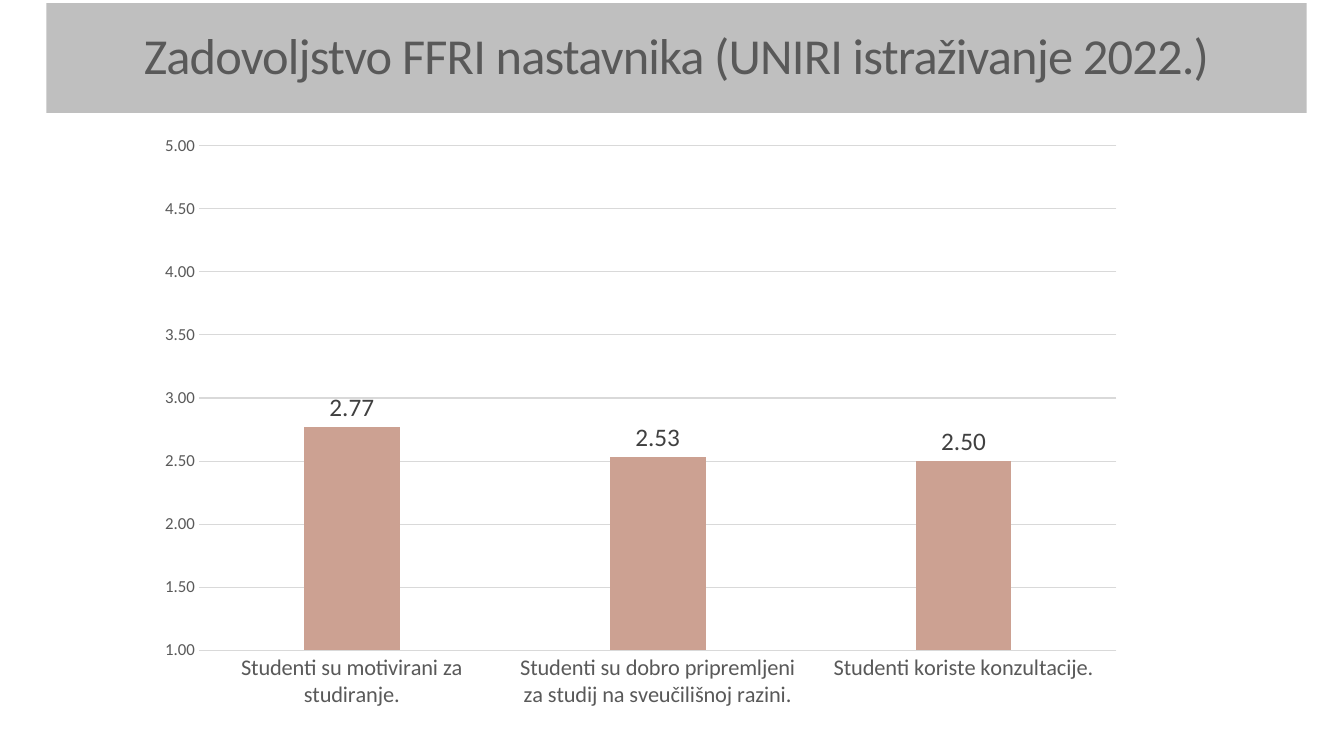
from pptx import Presentation
from pptx.chart.data import CategoryChartData
from pptx.dml.color import RGBColor
from pptx.enum.chart import XL_CHART_TYPE, XL_LABEL_POSITION, XL_TICK_MARK
from pptx.enum.shapes import MSO_SHAPE
from pptx.enum.text import MSO_ANCHOR, PP_ALIGN
from pptx.util import Inches, Pt

COLUMN = XL_CHART_TYPE.COLUMN_CLUSTERED
ABOVE = XL_LABEL_POSITION.OUTSIDE_END
NO_TICK = XL_TICK_MARK.NONE
RECT = MSO_SHAPE.RECTANGLE
MIDDLE = MSO_ANCHOR.MIDDLE
CENTER = PP_ALIGN.CENTER

TITLE = "Zadovoljstvo FFRI nastavnika (UNIRI istraživanje 2022.)"
SCORES = {
    "Studenti su motivirani za studiranje.": 2.77,
    "Studenti su dobro pripremljeni za studij na sveučilišnoj razini.": 2.53,
    "Studenti koriste konzultacije.": 2.50,
}
FACE = "Calibri"
FORMAT = "###0.00"
GRAY, DARK, PALE, BAND, ROSE = "595959", "404040", "D9D9D9", "BFBFBF", "CCA192"
CHART_BOX = (1.44, 1.23, 9.83, 5.92)
TITLE_BOX = (0.46, 0.03, 12.5, 1.09)


def paint(target, color):
    target.solid()
    target.fore_color.rgb = RGBColor.from_string(color)


def style(font, size, color):
    font.name = FACE
    font.size = Pt(size)
    font.bold = False
    paint(font.fill, color)


def rule(line):
    paint(line.fill, PALE)
    line.width = Pt(0.75)


def add_scores(slide):
    data = CategoryChartData(number_format=FORMAT)
    data.categories = list(SCORES)
    data.add_series("Series 1", list(SCORES.values()))
    box = [Inches(n) for n in CHART_BOX]
    chart = slide.shapes.add_chart(COLUMN, *box, data).chart
    style(chart.font, 10, "000000")
    chart.has_title = False
    chart.has_legend = False

    for axis, size in ((chart.category_axis, 16), (chart.value_axis, 12)):
        axis.major_tick_mark = axis.minor_tick_mark = NO_TICK
        style(axis.tick_labels.font, size, GRAY)
    rule(chart.category_axis.format.line)

    scale = chart.value_axis
    scale.minimum_scale, scale.maximum_scale = 1, 5
    scale.major_unit = 0.5
    scale.format.line.fill.background()
    rule(scale.major_gridlines.format.line)
    scale.tick_labels.number_format = FORMAT
    scale.tick_labels.number_format_is_linked = False

    plot = chart.plots[0]
    plot.vary_by_categories = False
    plot.gap_width, plot.overlap = 219, -27
    paint(plot.series[0].format.fill, ROSE)
    plot.has_data_labels = True
    labels = plot.data_labels
    labels.show_value = True
    labels.position = ABOVE
    labels.number_format = FORMAT
    labels.number_format_is_linked = False
    style(labels.font, 18, DARK)


def add_title(slide):
    band = slide.shapes.add_shape(RECT, *[Inches(n) for n in TITLE_BOX])
    band.shadow.inherit = False
    paint(band.fill, BAND)
    band.line.fill.background()
    frame = band.text_frame
    frame.word_wrap = True
    frame.vertical_anchor = MIDDLE
    para = frame.paragraphs[0]
    para.alignment = CENTER
    para.line_spacing = 0.9
    run = para.add_run()
    run.text = TITLE
    style(run.font, 36, GRAY)
    run.font.bold = None
    run._r.get_or_add_rPr().set("spc", "-60")


def main():
    """Build the teacher satisfaction slide."""
    deck = Presentation()
    deck.slide_width, deck.slide_height = Inches(13.33), Inches(7.5)
    slide = deck.slides.add_slide(deck.slide_layouts[6])
    add_scores(slide)
    add_title(slide)
    deck.save("out.pptx")


if __name__ == "__main__":
    main()
